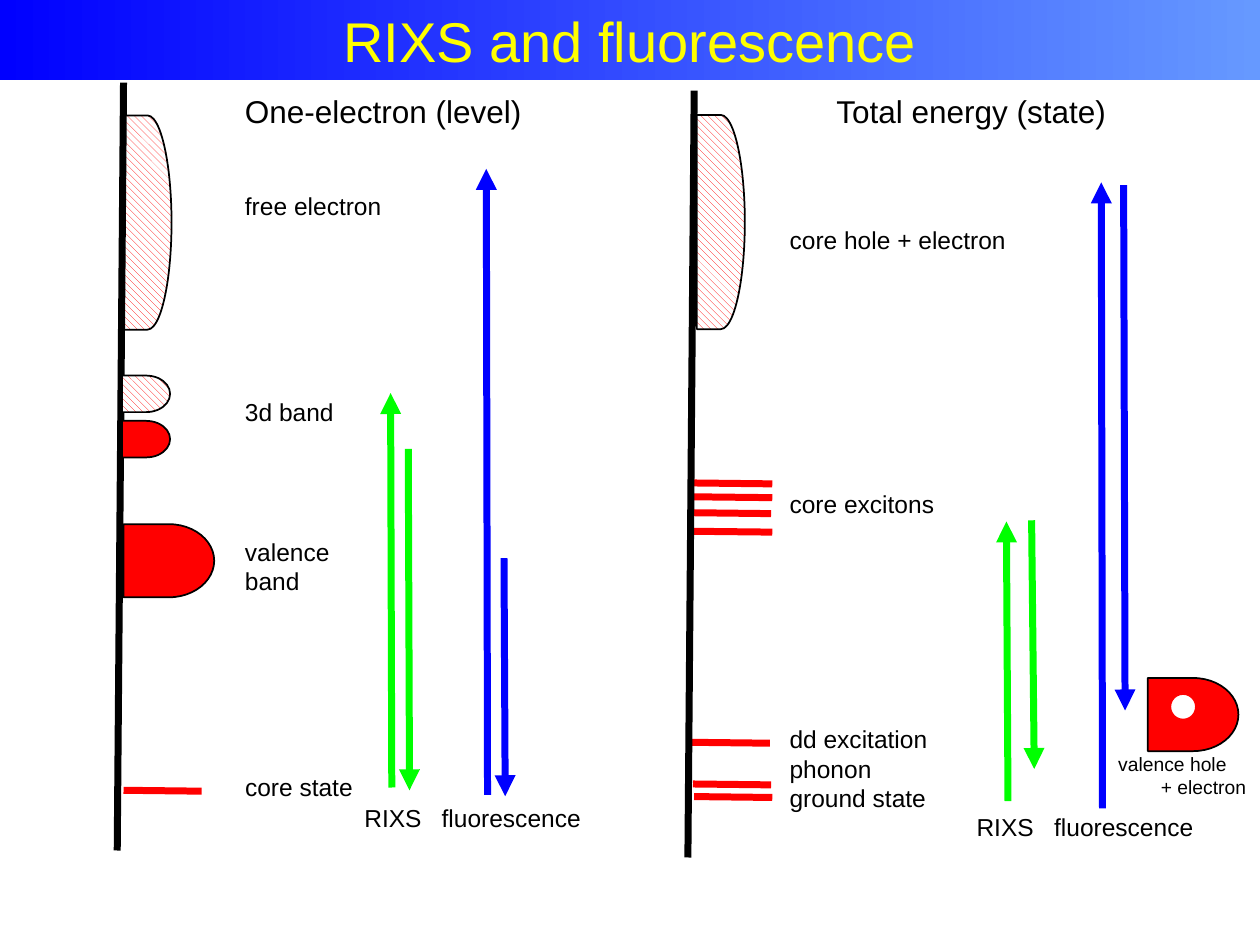
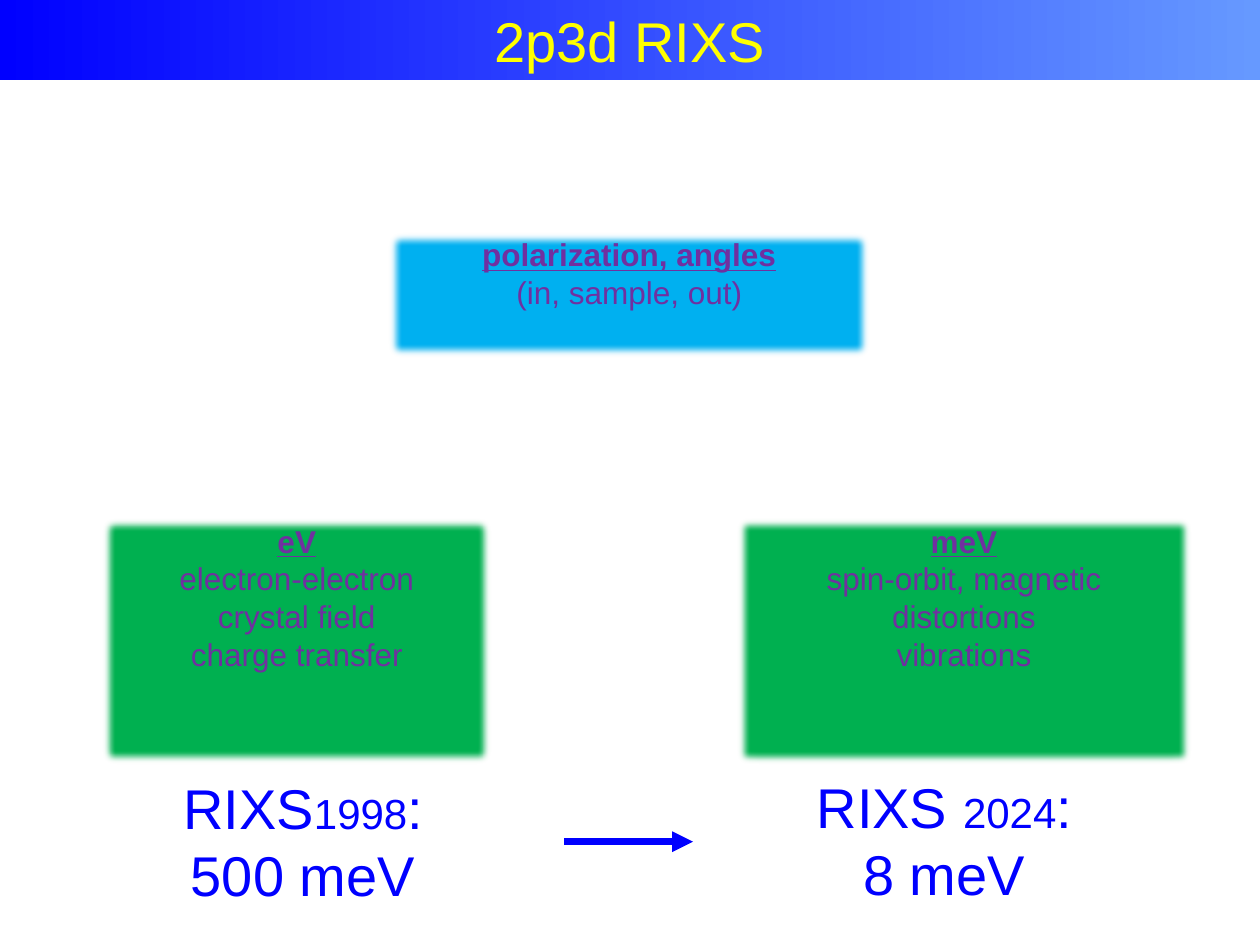
from typing import NamedTuple

import pptx
import pptx.dml.color
import pptx.enum.dml
import pptx.enum.shapes
import pptx.enum.text
import pptx.oxml
import pptx.oxml.ns
import pptx.util
from lxml import etree

Pt = pptx.util.Pt
qn = pptx.oxml.ns.qn
KIND = pptx.enum.shapes.MSO_SHAPE
ALIGN = pptx.enum.text.PP_ALIGN

FONT = "Arial"
WIDE, HIGH = 720, 540
BAND_H = 45.7
HEX = {
    "black": "000000", "white": "FFFFFF", "red": "FF0000", "lime": "00FF00",
    "blue": "0000FF", "sky": "6699FF", "yellow": "FFFF00", "green": "00B050",
    "cyan": "00B0F0", "purple": "7030A0",
}


class Band(NamedTuple):
    left: float
    top: float
    width: float
    height: float
    full: bool  # solid when occupied, hatched when empty


class Line(NamedTuple):
    x1: float
    y1: float
    x2: float
    y2: float
    color: str
    arrow: bool = True


class Label(NamedTuple):
    left: float
    top: float
    text: str
    size: float = 14


class Panel(NamedTuple):
    left: float
    top: float
    width: float
    height: float
    fill: str
    head: str
    body: tuple[str, ...]


class Era(NamedTuple):
    left: float
    top: float
    width: float
    name: str
    year: str
    value: str


# Energy bands: the first two lie behind the axes
FREE, SMALL, VALENCE = (27.4, 122.4), (27.4, 20.9), (51.8, 41.8)
BACK = [Band(70.6, 299.5, *VALENCE, True), Band(70.6, 66.0, *FREE, False)]
FRONT = [
    Band(69.8, 214.6, *SMALL, False),
    Band(69.8, 240.5, *SMALL, True),
    Band(398.2, 65.7, *FREE, False),
    Band(655.9, 387.4, *VALENCE, True),
]

# Left ends of the discrete levels
LEVEL_W, TILT = 44.6, 0.5
LEVELS = [
    (70.6, 451.6), (396.7, 455.2), (396.7, 303.6), (395.3, 424.2),
    (396.0, 448.0), (396.0, 293.0), (396.7, 283.9), (396.7, 276.0),
]

AXES = [
    Line(70.6, 47.2, 67.0, 486, "black", False),
    Line(396.7, 51.8, 393.1, 490, "black", False),
]
ARROWS = [
    Line(223.9, 450, 223.2, 224.6, "lime"),
    Line(233.3, 256.5, 234, 451.6, "lime"),
    Line(278.6, 454.2, 277.9, 96.5, "blue"),
    Line(288, 319, 288.7, 455, "blue"),
    Line(576, 457.8, 575.1, 298, "lime"),
    Line(589.5, 297.3, 591, 439.4, "lime"),
    Line(630, 462, 629.3, 104.2, "blue"),
    Line(642.1, 105.8, 642.9, 406, "blue"),
]

LABELS = [
    Label(140, 52.6, "One-electron (level)", 18),
    Label(478, 52.6, "Total energy (state)", 18),
    Label(140, 109.4, "free electron"),
    Label(140, 227.1, "3d band"),
    Label(140, 306.6, "valence\nband"),
    Label(140, 440.9, "core state"),
    Label(451.2, 128.3, "core hole + electron"),
    Label(451.2, 279.7, "core excitons"),
    Label(451.2, 414, "dd excitation\nphonon\nground state"),
    Label(208.2, 458.6, "RIXS"),
    Label(252.4, 458.6, "fluorescence"),
    Label(558, 464.2, "RIXS"),
    Label(602.4, 464.2, "fluorescence"),
    Label(639, 429.8, "valence hole", 11),
    Label(663.4, 442.9, "+ electron", 11),
]

PANELS = [
    Panel(56.9, 294.5, 225.4, 143.3, "green", "eV",
          ("electron-electron", "crystal field", "charge transfer")),
    Panel(220.3, 131, 278.6, 74.9, "cyan", "polarization, angles",
          ("(in, sample, out)",)),
    Panel(419.8, 294.5, 262.1, 143.3, "green", "meV",
          ("spin-orbit, magnetic", "distortions", "vibrations")),
]
ERAS = [
    Era(458.6, 437.8, 162, "RIXS ", "2024", "8 meV"),
    Era(96.5, 438.5, 153.4, "RIXS", "1998", "500 meV"),
]


def rgb(name: str) -> pptx.dml.color.RGBColor:
    return pptx.dml.color.RGBColor.from_string(HEX[name])


def style(run, size: float, color: str, strong: bool = False) -> None:
    font = run.font
    font.name, font.size = FONT, Pt(size)
    font.color.rgb = rgb(color)
    font.bold = font.underline = strong


def add_slide(deck, title: str):
    """Add a slide whose title is the gradient band on top."""
    slide = deck.slides.add_slide(deck.slide_layouts[5])
    band = slide.shapes.title
    band.left, band.top, band.width, band.height = 0, 0, Pt(WIDE), Pt(BAND_H)
    band.fill.gradient()
    band.fill.gradient_angle = 0
    for stop, color, place in zip(band.fill.gradient_stops, ("blue", "sky"), (0, 1)):
        stop.color.rgb = rgb(color)
        stop.position = place
    frame = band.text_frame
    frame.text = title
    frame.auto_size = pptx.enum.text.MSO_AUTO_SIZE.NONE
    frame.vertical_anchor = pptx.enum.text.MSO_ANCHOR.MIDDLE
    frame.paragraphs[0].alignment = ALIGN.CENTER
    style(frame.paragraphs[0].runs[0], 32, "yellow")
    return slide


def add_shape(slide, kind, left: float, top: float, width: float, height: float):
    shape = slide.shapes.add_shape(kind, Pt(left), Pt(top), Pt(width), Pt(height))
    shape.shadow.inherit = False
    return shape


def draw_band(slide, band: Band) -> None:
    shape = add_shape(slide, KIND.FLOWCHART_DELAY, *band[:4])
    if band.full:
        shape.fill.solid()
    else:
        shape.fill.patterned()
        shape.fill.pattern = pptx.enum.dml.MSO_PATTERN.WIDE_DOWNWARD_DIAGONAL
        shape.fill.back_color.rgb = rgb("white")
    shape.fill.fore_color.rgb = rgb("red")
    shape.line.color.rgb = rgb("black")
    shape.line.width = Pt(1)


def draw_line(slide, line: Line) -> None:
    link = slide.shapes.add_connector(
        pptx.enum.shapes.MSO_CONNECTOR.STRAIGHT, *(Pt(n) for n in line[:4]))
    link.line.color.rgb = rgb(line.color)
    link.line.width = Pt(4)
    props = link.element.spPr
    if line.arrow:
        etree.SubElement(props.find(qn("a:ln")), qn("a:tailEnd"), type="triangle")
    etree.SubElement(props, qn("a:effectLst"))


def draw_label(slide, label: Label) -> None:
    lines = label.text.split("\n")
    width = max(map(len, lines)) * label.size * 0.6
    height = len(lines) * label.size * 1.2
    box = slide.shapes.add_textbox(
        Pt(label.left), Pt(label.top), Pt(width), Pt(height))
    frame = box.text_frame
    frame.margin_left = frame.margin_right = 0
    frame.margin_top = frame.margin_bottom = 0
    frame.word_wrap = False
    frame.text = label.text
    for para in frame.paragraphs:
        style(para.runs[0], label.size, "black")


def draw_panel(slide, panel: Panel) -> None:
    shape = add_shape(slide, KIND.RECTANGLE, *panel[:4])
    shape.fill.solid()
    shape.fill.fore_color.rgb = rgb(panel.fill)
    shape.line.fill.background()
    glow = shape.element.spPr.find(qn("a:effectLst"))
    etree.SubElement(glow, qn("a:softEdge"), rad=str(Pt(5)))
    frame = shape.text_frame
    frame.word_wrap = True
    frame.vertical_anchor = pptx.enum.text.MSO_ANCHOR.TOP
    frame.text = "\n".join((panel.head, *panel.body))
    for row, para in enumerate(frame.paragraphs):
        para.alignment = ALIGN.CENTER
        style(para.runs[0], 18, "purple", strong=row == 0)


def draw_era(slide, era: Era) -> None:
    box = slide.shapes.add_textbox(Pt(era.left), Pt(era.top), Pt(era.width), Pt(85))
    frame = box.text_frame
    frame.word_wrap = True
    frame.text = f"{era.name}\n{era.value}"
    first = frame.paragraphs[0]
    for text in (era.year, ":"):
        first.add_run().text = text
    for para in frame.paragraphs:
        para.alignment = ALIGN.CENTER
        for run in para.runs:
            style(run, 24 if run.text == era.year else 32, "blue")


def build_levels(deck) -> None:
    slide = add_slide(deck, "RIXS and fluorescence")
    for band in BACK:
        draw_band(slide, band)
    rungs = [Line(x + LEVEL_W, y + TILT, x, y, "red", False) for x, y in LEVELS]
    for line in rungs + AXES + ARROWS:
        draw_line(slide, line)
    for band in FRONT:
        draw_band(slide, band)
    # Hole in the valence band
    hole = add_shape(slide, KIND.OVAL, 668.9, 396.7, 14.4, 14.4)
    hole.fill.solid()
    hole.fill.fore_color.rgb = rgb("white")
    hole.line.color.rgb = rgb("red")
    hole.line.width = Pt(0.75)
    for label in LABELS:
        draw_label(slide, label)


def build_scales(deck) -> None:
    slide = add_slide(deck, "2p3d RIXS")
    for panel in PANELS:
        draw_panel(slide, panel)
    for era in ERAS:
        draw_era(slide, era)
    draw_line(slide, Line(322.3, 481, 396, 481, "blue"))


def main() -> None:
    deck = pptx.Presentation()
    deck.slide_width, deck.slide_height = Pt(WIDE), Pt(HIGH)
    build_levels(deck)
    build_scales(deck)
    deck.save("out.pptx")


if __name__ == "__main__":
    main()
